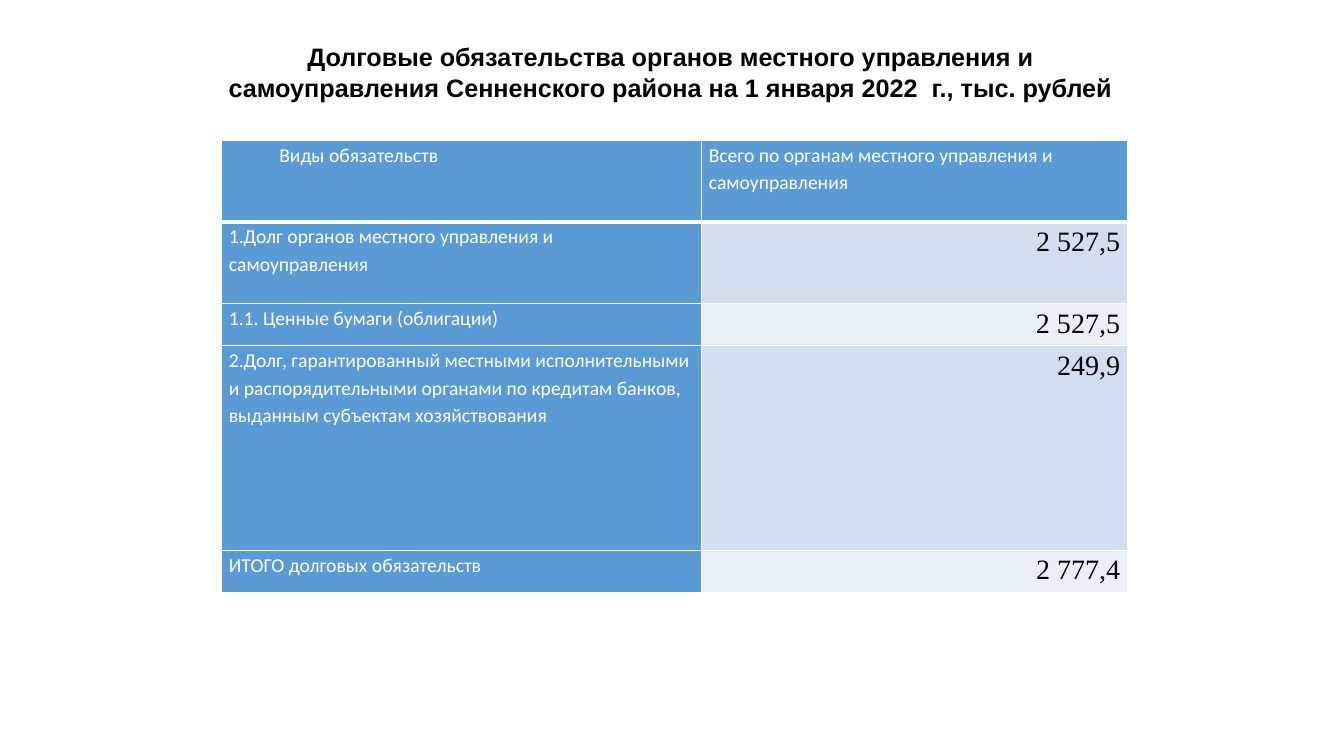
from dataclasses import dataclass

from pptx import Presentation
from pptx.dml.color import RGBColor
from pptx.enum.text import MSO_ANCHOR, MSO_AUTO_SIZE, PP_ALIGN
from pptx.oxml import parse_xml
from pptx.oxml.ns import nsdecls
from pptx.slide import Slide
from pptx.table import _Cell as Cell
from pptx.util import Inches, Pt

COLORS = {
    "blue": "5B9BD5",
    "band_dark": "D2DEEF",
    "band_light": "EAEFF7",
    "white": "FFFFFF",
    "black": "000000",
}
COLUMN_WIDTHS = (4.76, 4.22)
TITLE = ("Долговые обязательства органов местного управления и "
         "самоуправления Сенненского района на 1 января 2022  г., тыс. рублей")


@dataclass(frozen=True)
class CellStyle:
    font: str
    size: int
    color: str
    align: PP_ALIGN


@dataclass(frozen=True)
class DebtRow:
    label: str
    value: str
    height: float


LABEL = CellStyle("Calibri", 14, "white", PP_ALIGN.LEFT)
AMOUNT = CellStyle("Times New Roman", 20, "black", PP_ALIGN.RIGHT)
ROWS = (
    DebtRow("Виды обязательств",
            "Всего по органам местного управления и самоуправления", 0.81),
    DebtRow("1.Долг органов местного управления и самоуправления", "2 527,5", 0.81),
    DebtRow("1.1. Ценные бумаги (облигации)", "\N{NO-BREAK SPACE}2 527,5", 0.42),
    DebtRow("2.Долг, гарантированный местными исполнительными и распорядительными "
            "органами по кредитам банков, выданным субъектам хозяйствования",
            "249,9", 2.03),
    DebtRow("ИТОГО долговых обязательств", "2 777,4", 0.42),
)


def rgb(name: str) -> RGBColor:
    return RGBColor.from_string(COLORS[name])


def add_borders(cell: Cell, bottom: int) -> None:
    properties = cell._tc.get_or_add_tcPr()
    for side, width in (("L", 1), ("R", 1), ("T", 1), ("B", bottom)):
        properties.append(parse_xml(
            f'<a:ln{side} {nsdecls("a")} w="{Pt(width)}"><a:solidFill>'
            f'<a:srgbClr val="{COLORS["white"]}"/></a:solidFill></a:ln{side}>'))


def fill_cell(cell: Cell, text: str, style: CellStyle, fill: str, bottom: int) -> None:
    add_borders(cell, bottom)
    cell.fill.solid()
    cell.fill.fore_color.rgb = rgb(fill)
    cell.margin_left = cell.margin_right = Inches(0.07)
    cell.margin_top = cell.margin_bottom = 0
    cell.text = text
    para = cell.text_frame.paragraphs[0]
    para.alignment = style.align
    para.line_spacing = 1.15
    para.font.name = style.font
    para.font.size = Pt(style.size)
    para.font.bold = False
    para.font.color.rgb = rgb(style.color)


def add_title(page: Slide) -> None:
    title = page.shapes.title
    title.left, title.top = Inches(2.12), Inches(0.36)
    title.width, title.height = Inches(9.06), Inches(0.71)
    frame = title.text_frame
    frame.text = TITLE
    frame.word_wrap = True
    frame.auto_size = MSO_AUTO_SIZE.NONE
    frame.vertical_anchor = MSO_ANCHOR.MIDDLE
    para = frame.paragraphs[0]
    para.alignment = PP_ALIGN.CENTER
    para.font.name = "Arial"
    para.font.size = Pt(18)
    para.font.bold = True
    para.font.color.rgb = rgb("black")


def add_debt_table(page: Slide) -> None:
    table = page.shapes.add_table(
        len(ROWS), len(COLUMN_WIDTHS), Inches(2.2), Inches(1.39),
        Inches(sum(COLUMN_WIDTHS)), Inches(sum(row.height for row in ROWS))).table
    for column, width in zip(table.columns, COLUMN_WIDTHS):
        column.width = Inches(width)
    for index, row in enumerate(ROWS):
        table.rows[index].height = Inches(row.height)
        header = index == 0
        bottom = 3 if header else 1
        band = "blue" if header else "band_dark" if index % 2 else "band_light"
        fill_cell(table.cell(index, 0), row.label, LABEL, "blue", bottom)
        fill_cell(table.cell(index, 1), row.value, LABEL if header else AMOUNT, band, bottom)
    heading = table.cell(0, 0).text_frame.paragraphs[0]
    heading._p.get_or_add_pPr().set("marL", str(Inches(0.5)))


def main() -> None:
    deck = Presentation()
    deck.slide_width, deck.slide_height = Inches(13.33), Inches(7.5)
    page = deck.slides.add_slide(deck.slide_layouts.get_by_name("Title Only"))
    add_debt_table(page)
    add_title(page)
    deck.save("out.pptx")


if __name__ == "__main__":
    main()
